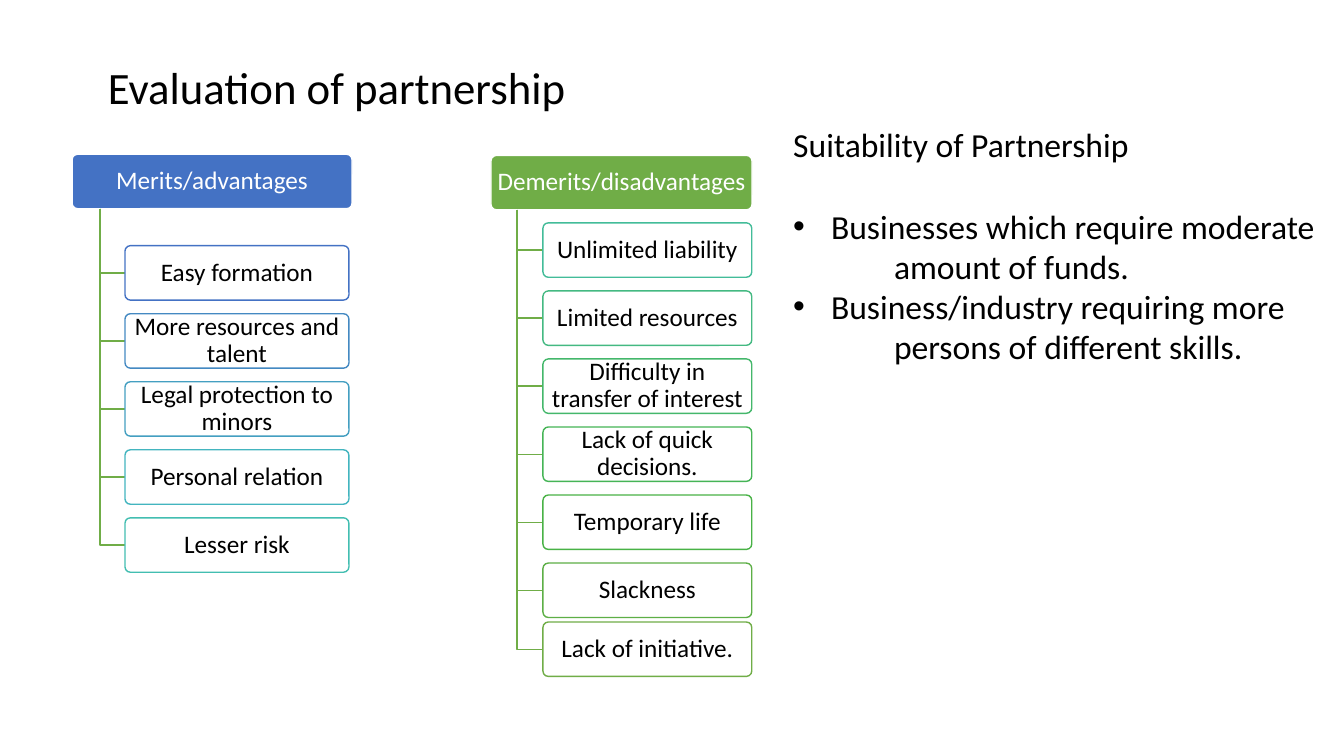
from pptx import Presentation
from pptx.dml.color import RGBColor
from pptx.enum import shapes, text
from pptx.oxml import ns
from pptx.util import Pt
from lxml import etree

FONT = "Calibri"
BLACK = RGBColor(0x00, 0x00, 0x00)
WHITE = RGBColor(0xFF, 0xFF, 0xFF)
BLUE = RGBColor(0x44, 0x72, 0xC4)
GREEN = RGBColor(0x70, 0xAD, 0x47)
STEEL = RGBColor(0x44, 0x89, 0xC2)
SKY = RGBColor(0x44, 0x9F, 0xC1)
CYAN = RGBColor(0x43, 0xB5, 0xBF)
TURQUOISE = RGBColor(0x43, 0xBE, 0xB1)
AQUA = RGBColor(0x43, 0xBC, 0x99)
JADE = RGBColor(0x44, 0xB9, 0x82)
MINT = RGBColor(0x44, 0xB7, 0x6B)
EMERALD = RGBColor(0x45, 0xB4, 0x56)
LEAF = RGBColor(0x49, 0xB2, 0x46)
GRASS = RGBColor(0x5D, 0xAF, 0x46)

BOX_HEIGHT = 38.9
ITEM_PITCH = 48.6

MERITS = [
    ("Easy formation", BLUE),
    ("More resources and talent", STEEL),
    ("Legal protection to minors", SKY),
    ("Personal relation", CYAN),
    ("Lesser risk", TURQUOISE),
]
DEMERITS = [
    ("Unlimited liability", AQUA),
    ("Limited resources", JADE),
    ("Difficulty in transfer of interest", MINT),
    ("Lack of quick decisions.", EMERALD),
    ("Temporary life", LEAF),
    ("Slackness", GRASS),
    ("Lack of initiative.", GREEN),
]
# Text, left margin, first-line indent, space before
SUITABILITY = [
    ("Suitability of Partnership", 0, 0, 0),
    ("Businesses which require moderate", 27, -27, 29.3),
    ("amount of funds.", 72, 0, 0),
    ("Business/industry requiring more", 27, -27, 0),
    ("persons of different skills.", 72, 0, 0),
]


def format_runs(paragraph, size, color):
    for run in paragraph.runs:
        run.font.name = FONT
        run.font.size = Pt(size)
        run.font.color.rgb = color


def place(shape, left, top, width, height):
    shape.left, shape.top = Pt(left), Pt(top)
    shape.width, shape.height = Pt(width), Pt(height)


def add_box(slide, label, left, top, width, fill, line, color):
    shape = slide.shapes.add_shape(
        shapes.MSO_SHAPE.ROUNDED_RECTANGLE,
        Pt(left), Pt(top), Pt(width), Pt(BOX_HEIGHT))
    shape.adjustments[0] = 0.1
    shape.shadow.inherit = False
    shape.fill.solid()
    shape.fill.fore_color.rgb = fill
    shape.line.color.rgb = line
    shape.line.width = Pt(1)
    frame = shape.text_frame
    frame.word_wrap = True
    frame.vertical_anchor = text.MSO_ANCHOR.MIDDLE
    frame.margin_left = frame.margin_right = Pt(2.75)
    frame.margin_top = frame.margin_bottom = Pt(2)
    frame.text = label
    paragraph = frame.paragraphs[0]
    paragraph.alignment = text.PP_ALIGN.CENTER
    paragraph.line_spacing = 0.9
    format_runs(paragraph, 18, color)


def add_elbow(slide, left, top, right, bottom):
    """Draw a branch going down and then right."""
    builder = slide.shapes.build_freeform(Pt(left), Pt(top))
    builder.add_line_segments(
        [(Pt(left), Pt(bottom)), (Pt(right), Pt(bottom))], close=False)
    shape = builder.convert_to_shape()
    shape.shadow.inherit = False
    shape.fill.background()
    shape.line.color.rgb = GREEN
    shape.line.width = Pt(1)


def add_branch(slide, heading, color, header, trunk, item_left, item_width,
               items, tops):
    """Draw a heading box with its items hanging from one trunk."""
    left, top, width = header
    add_box(slide, heading, left, top, width, color, WHITE, WHITE)
    for (label, line), item_top in zip(items, tops):
        add_elbow(slide, trunk, top + BOX_HEIGHT,
                  item_left, item_top + BOX_HEIGHT / 2)
        add_box(slide, label, item_left, item_top, item_width,
                WHITE, line, BLACK)


def item_tops(first, count):
    return [first + index * ITEM_PITCH for index in range(count)]


def fill_title(title):
    place(title, 69.8, 38.9, 345.6, 46)
    frame = title.text_frame
    frame.text = "Evaluation of partnership"
    frame.auto_size = text.MSO_AUTO_SIZE.NONE
    frame.vertical_anchor = text.MSO_ANCHOR.TOP
    paragraph = frame.paragraphs[0]
    paragraph.alignment = text.PP_ALIGN.LEFT
    format_runs(paragraph, 32, BLACK)


def set_indent(paragraph, margin, indent):
    """Indent the paragraph; a hanging indent gets a bullet."""
    properties = paragraph._p.get_or_add_pPr()
    properties.set("marL", str(Pt(margin)))
    properties.set("indent", str(Pt(indent)))
    if indent < 0:
        font = etree.SubElement(properties, ns.qn("a:buFont"))
        font.set("typeface", "Arial")
        bullet = etree.SubElement(properties, ns.qn("a:buChar"))
        bullet.set("char", "•")
    else:
        etree.SubElement(properties, ns.qn("a:buNone"))


def fill_body(body):
    place(body, 559.4, 85, 396, 181.4)
    frame = body.text_frame
    frame.word_wrap = True
    frame.auto_size = text.MSO_AUTO_SIZE.NONE
    frame.text = "\n".join(row[0] for row in SUITABILITY)
    for paragraph, row in zip(frame.paragraphs, SUITABILITY):
        _, margin, indent, before = row
        paragraph.space_before = Pt(before)
        set_indent(paragraph, margin, indent)
        format_runs(paragraph, 24, BLACK)


def main():
    presentation = Presentation()
    presentation.slide_width, presentation.slide_height = Pt(960), Pt(540)
    slide = presentation.slides.add_slide(presentation.slide_layouts[1])
    fill_title(slide.shapes.title)
    fill_body(slide.placeholders[1])
    add_branch(slide, "Merits/advantages", BLUE, (51.5, 110.2, 200), 71.3,
               89.3, 160, MERITS, item_tops(175.5, len(MERITS)))
    # The last demerit sits closer to the one above it
    demerit_tops = item_tops(159.2, len(DEMERITS) - 1) + [444.3]
    add_branch(slide, "Demerits/disadvantages", GREEN, (350.7, 111, 186.5),
               369.3, 387.8, 149.2, DEMERITS, demerit_tops)
    presentation.save("out.pptx")


if __name__ == "__main__":
    main()
